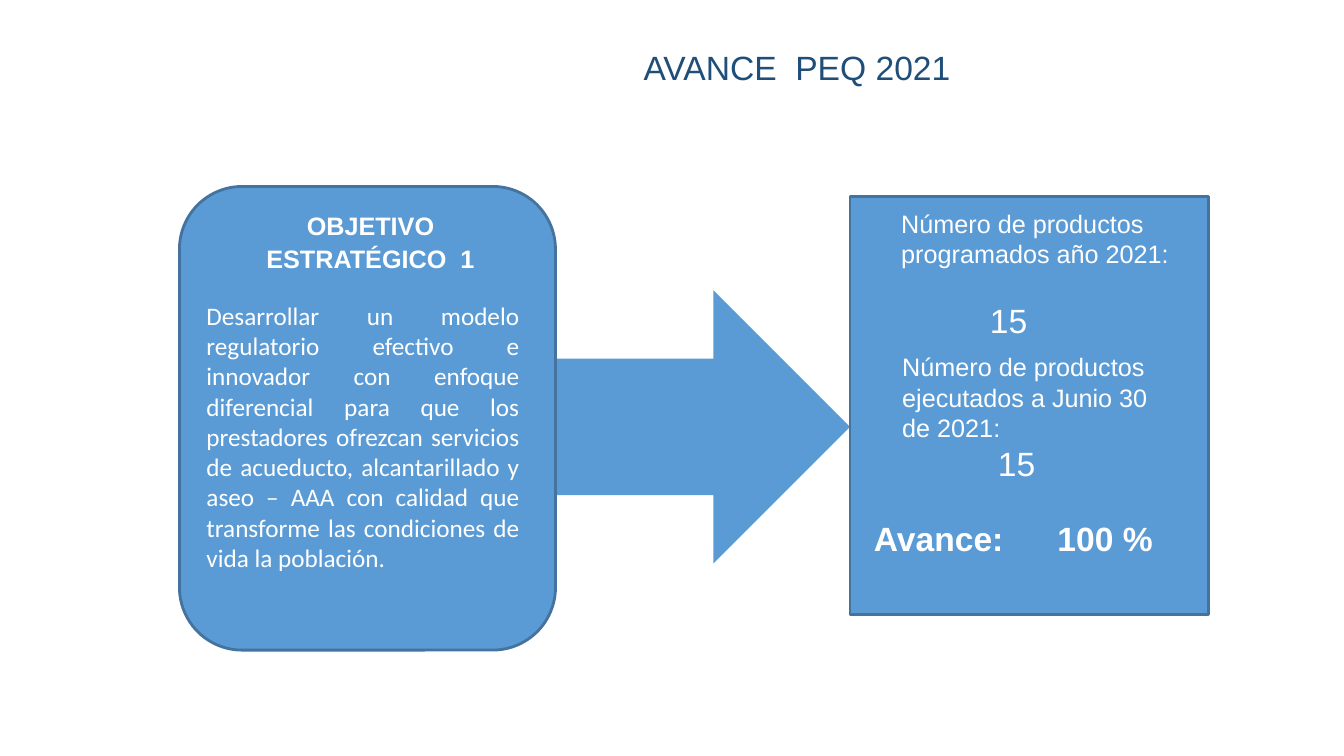
from dataclasses import dataclass, field
from typing import Any

from lxml import etree
from pptx import Presentation
from pptx.dml.color import RGBColor
from pptx.enum import shapes, text
from pptx.oxml import ns
from pptx.util import Inches, Pt

BLUE, EDGE, NAVY, WHITE = "5B9BD5", "43739E", "1F4E79", "FFFFFF"
KIND = shapes.MSO_SHAPE
ALIGN = text.PP_ALIGN


@dataclass
class Block:
    kind: Any
    at: tuple[float, ...]
    edge: str = ""


@dataclass
class Para:
    text: str
    size: int = 18
    bold: bool = False
    face: str = "Arial"
    color: str = WHITE
    indent: float = 0
    tab: float = 0
    form: dict[str, Any] = field(default_factory=dict)


@dataclass
class Label:
    at: tuple[float, ...]
    paras: list[Para]


TITLE = Label((3.31, 0.42, 9.19, 0.5), [
    Para("AVANCE  PEQ 2021", 24, color=NAVY, form={"alignment": ALIGN.CENTER})])

BLOCKS = [
    Block(KIND.RIGHT_ARROW, (5.51, 2.88, 2.92, 2.71)),
    Block(KIND.RECTANGLE, (8.43, 1.95, 3.56, 4.15), EDGE),
    Block(KIND.ROUNDED_RECTANGLE, (1.78, 1.85, 3.73, 4.6), EDGE),
]

LABELS = [
    Label((8.84, 2.02, 2.96, 1.4), [
        Para("Número de productos programados año 2021:"),
        Para("15", 24, indent=0.88, form={"space_before": Pt(22)})]),
    Label((8.85, 3.44, 2.96, 1.41), [
        Para("Número de productos ejecutados a Junio 30 de 2021:"),
        Para("15", 24, indent=0.95)]),
    Label((8.57, 5.09, 3.36, 0.5), [
        Para("Avance:\t100 %", 24, bold=True, tab=1.82)]),
    Label((2.51, 2.02, 2.33, 0.73), [
        Para("OBJETIVO ESTRATÉGICO  1", bold=True, form={
            "alignment": ALIGN.CENTER, "line_spacing": 1.07,
            "space_after": Pt(8)})]),
    Label((1.95, 2.93, 3.3, 2.83), [
        Para("Desarrollar un modelo regulatorio efectivo e innovador con "
             "enfoque diferencial para que los prestadores ofrezcan servicios "
             "de acueducto, alcantarillado y aseo – AAA con calidad que "
             "transforme las condiciones de vida la población.",
             face="Calibri", form={"alignment": ALIGN.JUSTIFY})]),
]


def paint(target: Any, color: str) -> None:
    """Give a fill or line fill one solid colour."""
    target.solid()
    target.fore_color.rgb = RGBColor.from_string(color)


def apply(target: Any, form: dict[str, Any]) -> None:
    for name, value in form.items():
        setattr(target, name, value)


def place(shape: Any, at: tuple[float, ...]) -> None:
    names = ("left", "top", "width", "height")
    apply(shape, dict(zip(names, map(Inches, at))))


def draw(slide: Any, block: Block) -> None:
    shape = slide.shapes.add_shape(block.kind, *map(Inches, block.at))
    shape.shadow.inherit = False
    paint(shape.fill, BLUE)
    if block.edge:
        paint(shape.line.fill, block.edge)
        shape.line.width = Pt(2)
    else:
        shape.line.fill.background()


def write(shape: Any, paras: list[Para]) -> None:
    frame = shape.text_frame
    apply(frame, {"word_wrap": True, "auto_size": text.MSO_AUTO_SIZE.NONE,
                  "vertical_anchor": text.MSO_ANCHOR.TOP})
    for i, item in enumerate(paras):
        para = frame.paragraphs[0] if i == 0 else frame.add_paragraph()
        apply(para, item.form)
        props = para._p.get_or_add_pPr()
        if item.indent:
            props.set("marL", str(Inches(item.indent)))
        if item.tab:
            stops = etree.SubElement(props, ns.qn("a:tabLst"))
            etree.SubElement(stops, ns.qn("a:tab"),
                             pos=str(Inches(item.tab)), algn="l")
        run = para.add_run()
        run.text = item.text
        apply(run.font, {"name": item.face, "size": Pt(item.size),
                         "bold": item.bold})
        paint(run.font.fill, item.color)


def main() -> None:
    deck = Presentation()
    apply(deck, {"slide_width": Inches(13.33), "slide_height": Inches(7.5)})
    slide = deck.slides.add_slide(deck.slide_layouts[5])
    place(slide.shapes.title, TITLE.at)
    write(slide.shapes.title, TITLE.paras)
    for block in BLOCKS:
        draw(slide, block)
    for label in LABELS:
        box = slide.shapes.add_textbox(*map(Inches, label.at))
        write(box, label.paras)
    deck.save("out.pptx")


if __name__ == "__main__":
    main()
